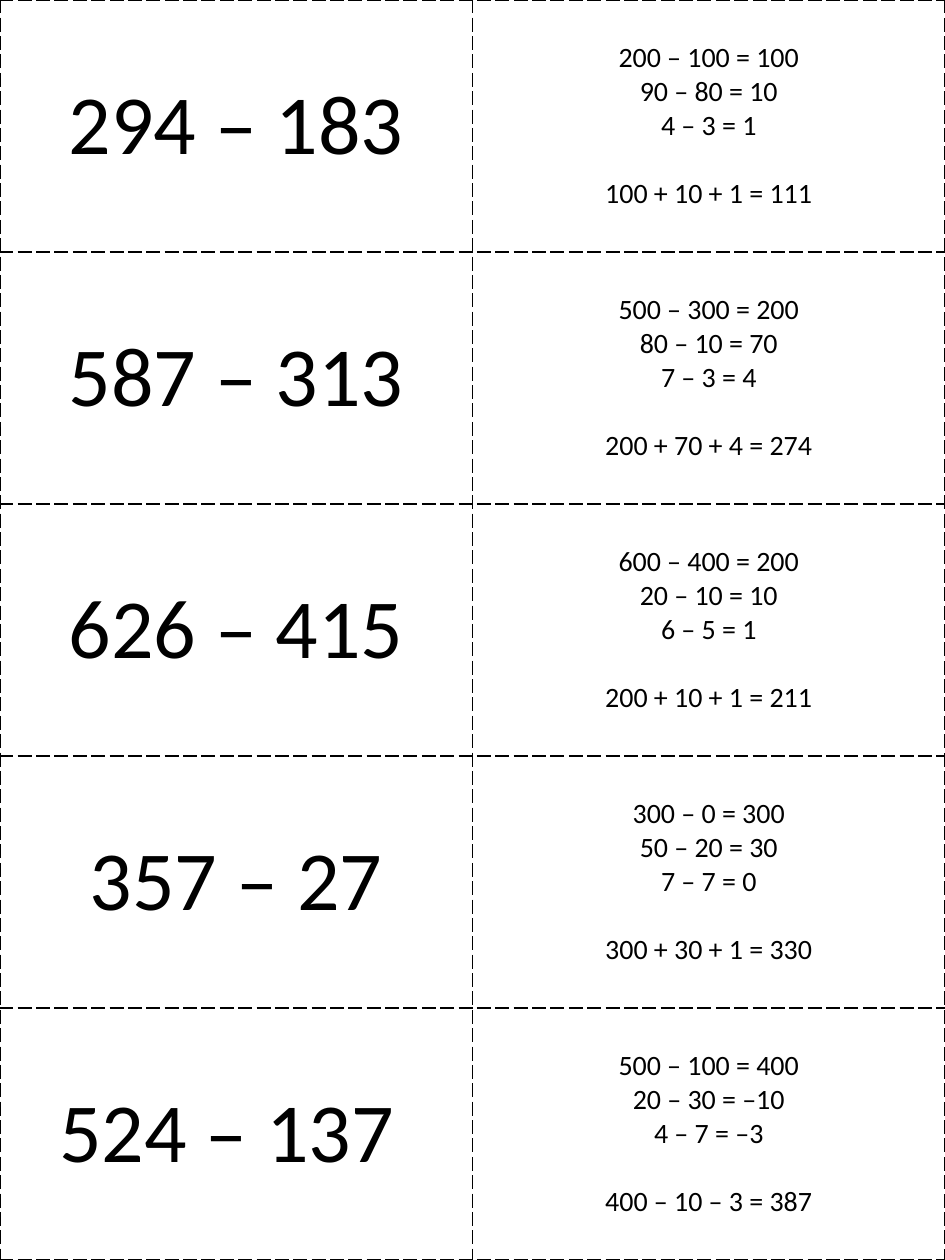
from lxml.etree import SubElement as Sub
from pptx import Presentation
from pptx.dml.color import RGBColor as Rgb
from pptx.enum.text import MSO_ANCHOR as Anchor, PP_ALIGN as Align
from pptx.oxml.ns import qn
from pptx.util import Inches, Pt

HUES = {"ink": "000000"}
CELL = {"margin_left": Inches(0.07), "margin_right": Inches(0.07),
        "margin_top": 0, "margin_bottom": 0,
        "vertical_anchor": Anchor.MIDDLE}
FONT = {"name": "Calibri", "bold": False}
BIG, SMALL = Pt(48), Pt(16)
GAP = Pt(19.5)  # one line of small text, above the last sum

# Each card: the task, then its steps and the final sum
CARDS = [
    ("294 – 183", ["200 – 100 = 100", "90 – 80 = 10", "4 – 3 = 1",
                   "100 + 10 + 1 = 111"]),
    ("587 – 313", ["500 – 300 = 200", "80 – 10 = 70", "7 – 3 = 4",
                   "200 + 70 + 4 = 274"]),
    ("626 – 415", ["600 – 400 = 200", "20 – 10 = 10", "6 – 5 = 1",
                   "200 + 10 + 1 = 211"]),
    ("357 – 27", ["300 – 0 = 300", "50 – 20 = 30", "7 – 7 = 0",
                  "300 + 30 + 1 = 330"]),
    ("524 – 137 ", ["500 – 100 = 400", "20 – 30 = –10", "4 – 7 = –3",
                    "400 – 10 – 3 = 387"]),
]


def edge(cell):
    """Draw a dashed cutting line on all four sides of a cell."""
    props = cell._tc.get_or_add_tcPr()
    for side in ("lnL", "lnR", "lnT", "lnB"):
        line = Sub(props, qn(f"a:{side}"), w=str(Pt(1)))
        fill = Sub(line, qn("a:solidFill"))
        Sub(fill, qn("a:srgbClr"), val=HUES["ink"])
        Sub(line, qn("a:prstDash"), val="lgDash")


def write(cell, lines, size):
    """Fill a cell with centred lines of one size."""
    cell.text = "\n".join(lines)
    for para in cell.text_frame.paragraphs:
        para.alignment = Align.CENTER
        for run in para.runs:
            for key, val in FONT.items():
                setattr(run.font, key, val)
            run.font.size = size
            run.font.color.rgb = Rgb.from_string(HUES["ink"])


# Page
deck = Presentation()
deck.slide_width, deck.slide_height = Inches(7.5), Inches(10)
page = deck.slides.add_slide(deck.slide_layouts[6])

# The grid of cards covers the whole page
grid = page.shapes.add_table(len(CARDS), 2, 0, 0, deck.slide_width,
                             deck.slide_height).table
grid.first_row = grid.horz_banding = False

# Tasks on the left, answers on the right
for row, (task, steps) in enumerate(CARDS):
    left, right = grid.cell(row, 0), grid.cell(row, 1)
    write(left, [task], BIG)
    write(right, steps, SMALL)
    right.text_frame.paragraphs[-1].space_before = GAP

# Cell format
for cell in grid.iter_cells():
    for key, val in CELL.items():
        setattr(cell, key, val)
    edge(cell)
    cell.fill.background()

deck.save("out.pptx")
